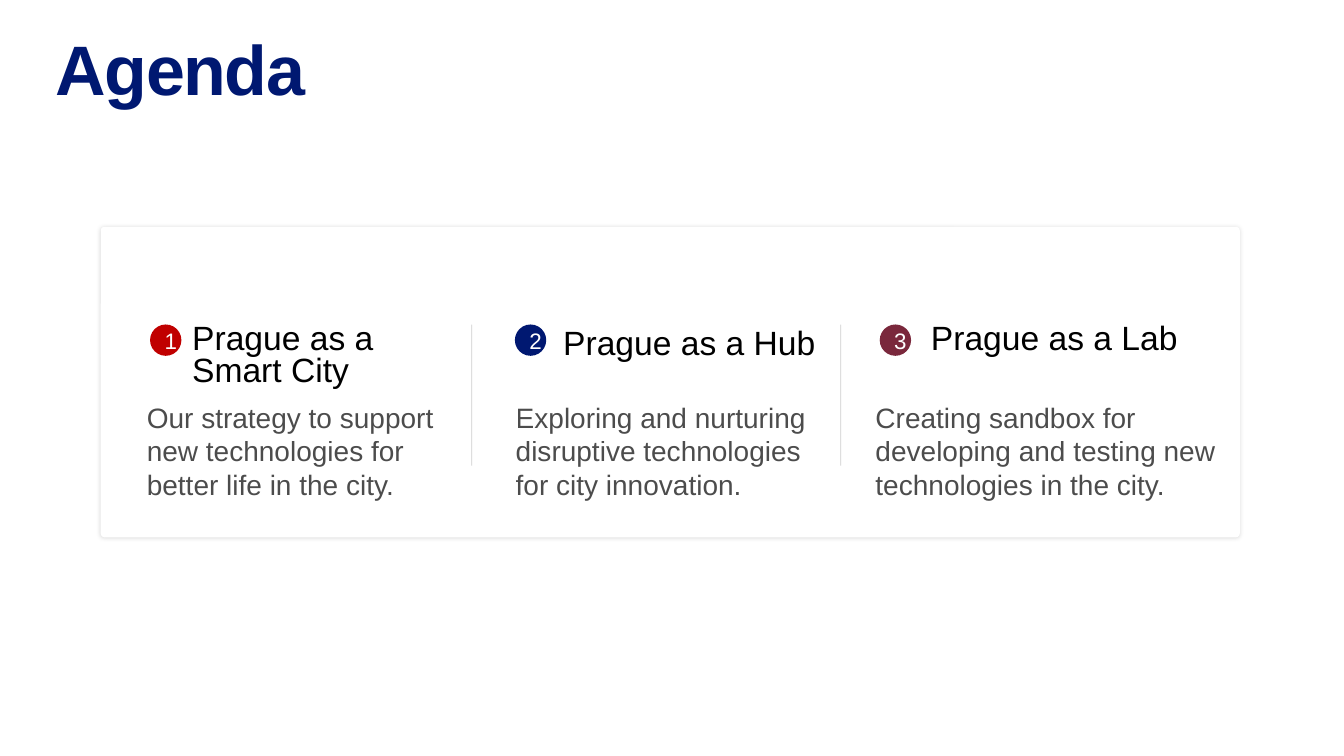
from lxml import etree
from pptx import Presentation
from pptx.dml.color import RGBColor
from pptx.enum.shapes import MSO_CONNECTOR, MSO_SHAPE
from pptx.enum.text import MSO_ANCHOR, PP_ALIGN
from pptx.oxml.ns import qn
from pptx.util import Pt

ROUNDED, OVAL = MSO_SHAPE.ROUNDED_RECTANGLE, MSO_SHAPE.OVAL
STRAIGHT = MSO_CONNECTOR.STRAIGHT
TOP, MIDDLE, CENTER = MSO_ANCHOR.TOP, MSO_ANCHOR.MIDDLE, PP_ALIGN.CENTER
FONT = "Arial"
COLORS = {"navy": "001871", "red": "C00000", "wine": "7A283C",
          "black": "000000", "white": "FFFFFF"}
BADGE = 22.4
TOPICS = [
    {"title": "Prague as a Smart City", "color": "red",
     "text": "Our strategy to support new technologies for better life in the city.",
     "title_dx": 23, "title_dy": -3.6, "text_dx": -9.4, "text_w": 228.2},
    {"title": "Prague as a Hub", "color": "navy",
     "text": "Exploring and nurturing disruptive technologies for city innovation.",
     "title_dx": 27.4, "title_dy": 0, "text_dx": -6.5, "text_w": 228.2},
    {"title": "Prague as a Lab", "color": "wine",
     "text": "Creating sandbox for developing and testing new technologies in the city.",
     "title_dx": 29.5, "title_dy": -3.6, "text_dx": -10.1, "text_w": 260},
]


def rgb(name):
    """Return the named colour."""
    return RGBColor.from_string(COLORS[name])


def set_alpha(fill_parent, percent):
    """Set the opacity of the solid fill found under an element."""
    color = fill_parent.find(".//" + qn("a:srgbClr"))
    etree.SubElement(color, qn("a:alpha")).set("val", str(percent * 1000))


def add_run(p, text, size, color, bold=False):
    """Add a formatted run to a paragraph."""
    r = p.add_run()
    r.text = text
    r.font.name, r.font.size, r.font.bold = FONT, Pt(size), bold
    r.font.color.rgb = rgb(color)
    return r


def add_text(s, x, y, w, h, text, size, color, spacing=None, bold=False):
    """Add a wrapped text box and return its frame and run."""
    tf = s.shapes.add_textbox(Pt(x), Pt(y), Pt(w), Pt(h)).text_frame
    tf.word_wrap = True
    tf.vertical_anchor = TOP
    p = tf.paragraphs[0]
    if spacing:
        p.line_spacing = spacing
    return tf, add_run(p, text, size, color, bold)


def add_title(s, x, y, w, h):
    """Place the slide title."""
    tf, r = add_text(s, x, y, w, h, "Agenda", 50, "navy", Pt(55), True)
    tf.margin_left = tf.margin_right = tf.margin_top = tf.margin_bottom = 0
    r.font._element.set("spc", "-100")


def add_filled(s, shape_type, x, y, w, h, color):
    """Add an unlined solid shape."""
    sp = s.shapes.add_shape(shape_type, Pt(x), Pt(y), Pt(w), Pt(h))
    sp.shadow.inherit = False
    sp.fill.solid()
    sp.fill.fore_color.rgb = rgb(color)
    sp.line.fill.background()
    return sp


def add_topic(s, x, y, number, topic):
    """Place a numbered badge with its heading and description."""
    add_text(s, x + topic["title_dx"], y + topic["title_dy"], 202.3, 21.6,
             topic["title"], 24, "black", 0.8)
    _, r = add_text(s, x + topic["text_dx"], y + 50.4, topic["text_w"], 47.5,
                    topic["text"], 20, "black")
    set_alpha(r.font._element, 70)
    sp = add_filled(s, OVAL, x, y, BADGE, BADGE, topic["color"])
    tf = sp.text_frame
    tf.vertical_anchor = MIDDLE
    p = tf.paragraphs[0]
    p.alignment = CENTER
    add_run(p, str(number), 16, "white")


def add_divider(s, x, y, h):
    """Place a faint vertical rule."""
    line = s.shapes.add_connector(STRAIGHT, Pt(x), Pt(y), Pt(x), Pt(y + h))
    line.line.width = Pt(0.5)
    line.line.color.rgb = rgb("black")
    sp_pr = line._element.spPr
    set_alpha(sp_pr, 20)
    etree.SubElement(sp_pr, qn("a:effectLst"))


def add_card(s, x, y, w, h):
    """Place the shadowed card with its three topics."""
    card = add_filled(s, ROUNDED, x, y, w, h, "white")
    card.adjustments[0] = 0.012
    effects = card._element.spPr.find(qn("a:effectLst"))
    shadow = etree.SubElement(effects, qn("a:outerShdw"), blurRad=str(Pt(3)),
                              dist=str(Pt(1)), dir="5400000",
                              algn="t", rotWithShape="0")
    etree.SubElement(shadow, qn("a:srgbClr"), val=COLORS["black"])
    set_alpha(shadow, 15)
    for i, topic in enumerate(TOPICS):
        add_topic(s, x + 35.2 + i * 260.6, y + 69.8, i + 1, topic)
    for i in range(len(TOPICS) - 1):
        add_divider(s, x + 265 + i * 263.5, y + 69.8, 100.8)


def main():
    """Build the agenda slide."""
    prs = Presentation()
    prs.slide_width, prs.slide_height = Pt(960), Pt(540)
    s = prs.slides.add_slide(prs.slide_layouts[6])
    add_title(s, 39.6, 23, 879, 98.6)
    add_card(s, 72, 162, 813.6, 221.8)
    prs.save("out.pptx")


if __name__ == "__main__":
    main()
